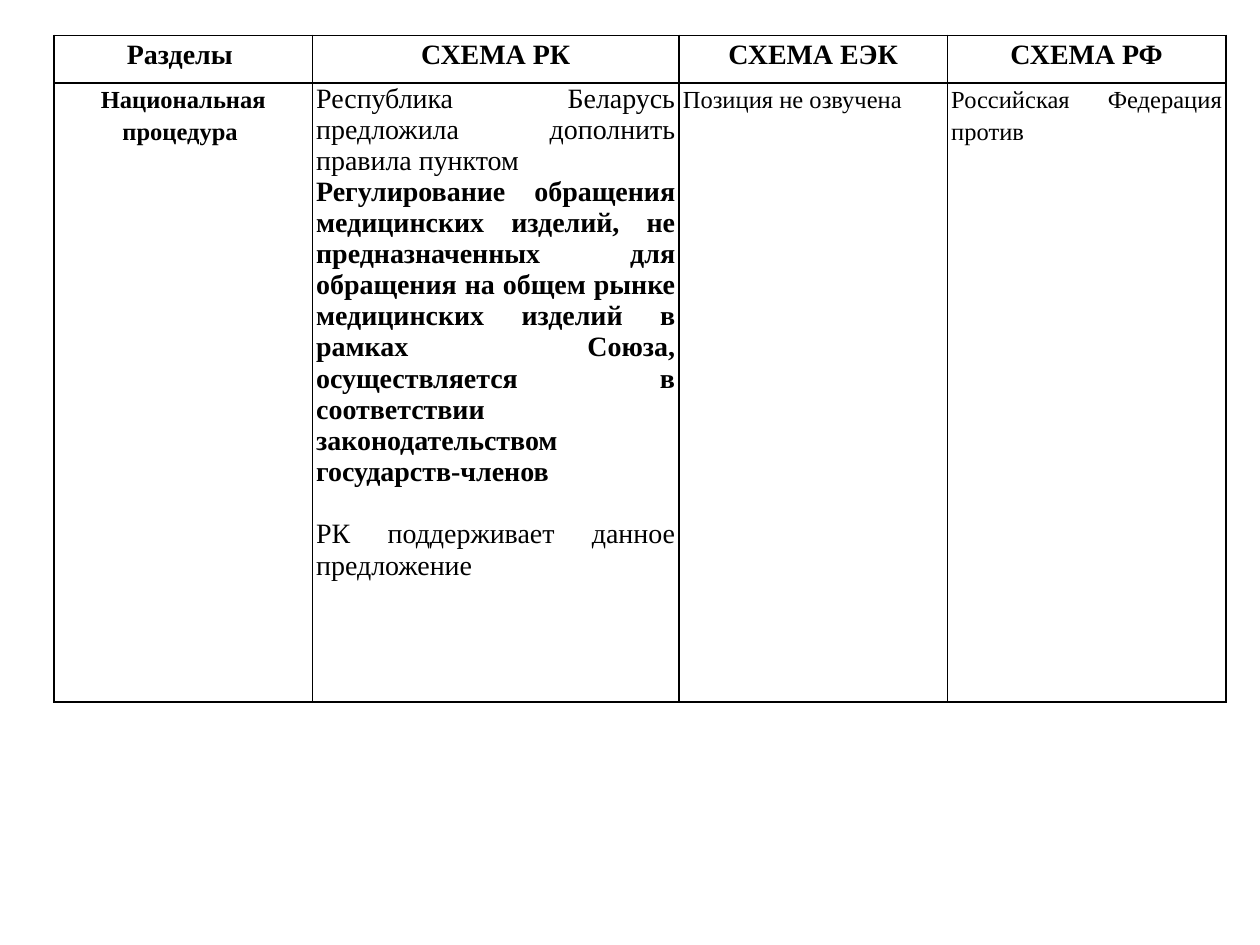
from dataclasses import dataclass

from lxml import etree
from pptx import Presentation
from pptx.dml.color import RGBColor
from pptx.enum.text import MSO_ANCHOR, PP_ALIGN
from pptx.oxml.ns import qn
from pptx.table import Table, _Cell
from pptx.util import Inches, Pt

CENTER, JUST, TOP = PP_ALIGN.CENTER, PP_ALIGN.JUSTIFY, MSO_ANCHOR.TOP
FONT = "Times New Roman"
BLACK = "000000"
WIDTHS = (2.05, 2.91, 2.13, 2.21)
HEIGHTS = (0.38, 4.91)


@dataclass
class Para:
    """One paragraph of a cell with its style."""
    text: str
    size: int = 14
    bold: bool = False
    align: PP_ALIGN = JUST
    line: float = 1.15
    before: int = 0


def head(text: str) -> list[Para]:
    """Return the content of a header cell."""
    return [Para(text, 16, True, CENTER)]


ROWS = (
    (head("Разделы "), head("СХЕМА РК"), head("СХЕМА ЕЭК"), head("СХЕМА РФ")),
    (
        [Para("Национальная процедура ", bold=True, align=CENTER)],
        [
            Para("Республика Беларусь предложила дополнить правила пунктом",
                 16, line=1.0),
            Para("Регулирование обращения медицинских изделий, не "
                 "предназначенных для обращения на общем рынке медицинских "
                 "изделий в рамках Союза, осуществляется в соответствии "
                 "законодательством государств-членов", 16, True, line=1.0),
            Para("РК поддерживает данное предложение", 16, line=1.0, before=18),
        ],
        [Para("Позиция не озвучена")],
        [Para("Российская Федерация против")],
    ),
)


def color(code: str) -> RGBColor:
    """Turn a hex string into a colour."""
    return RGBColor.from_string(code)


def frame(cell: _Cell) -> None:
    """Draw a thin line on all four sides of a cell."""
    props = cell._tc.get_or_add_tcPr()
    for spot, side in enumerate(("lnL", "lnR", "lnT", "lnB")):
        line = etree.Element(qn(f"a:{side}"), w=str(Pt(1)))
        fill = etree.SubElement(line, qn("a:solidFill"))
        etree.SubElement(fill, qn("a:srgbClr"), val=BLACK)
        props.insert(spot, line)


def write(cell: _Cell, paras: list[Para]) -> None:
    """Fill a cell with styled paragraphs."""
    cell.fill.background()
    cell.margin_left = cell.margin_right = Inches(0.03)
    cell.margin_top = cell.margin_bottom = 0
    cell.vertical_anchor = TOP
    body = cell.text_frame
    body.text = "\n".join(item.text for item in paras)
    for para, item in zip(body.paragraphs, paras):
        para.alignment = item.align
        para.line_spacing = item.line
        if item.before:
            para.space_before = Pt(item.before)
        for run in para.runs:
            run.font.name = FONT
            run.font.size = Pt(item.size)
            run.font.bold = item.bold
            run.font.color.rgb = color(BLACK)


def fill(table: Table) -> None:
    """Size the grid and write every cell."""
    for column, width in zip(table.columns, WIDTHS):
        column.width = Inches(width)
    for row, height, texts in zip(table.rows, HEIGHTS, ROWS):
        row.height = Inches(height)
        for cell, paras in zip(row.cells, texts):
            write(cell, paras)
            frame(cell)


def main() -> None:
    """Build the slide and save it."""
    deck = Presentation()
    deck.slide_width, deck.slide_height = Inches(10), Inches(7.5)
    slide = deck.slides.add_slide(deck.slide_layouts[6])
    grid = slide.shapes.add_table(
        len(HEIGHTS), len(WIDTHS), Inches(0.43), Inches(0.28),
        Inches(sum(WIDTHS)), Inches(sum(HEIGHTS)))
    fill(grid.table)
    deck.save("out.pptx")


if __name__ == "__main__":
    main()
